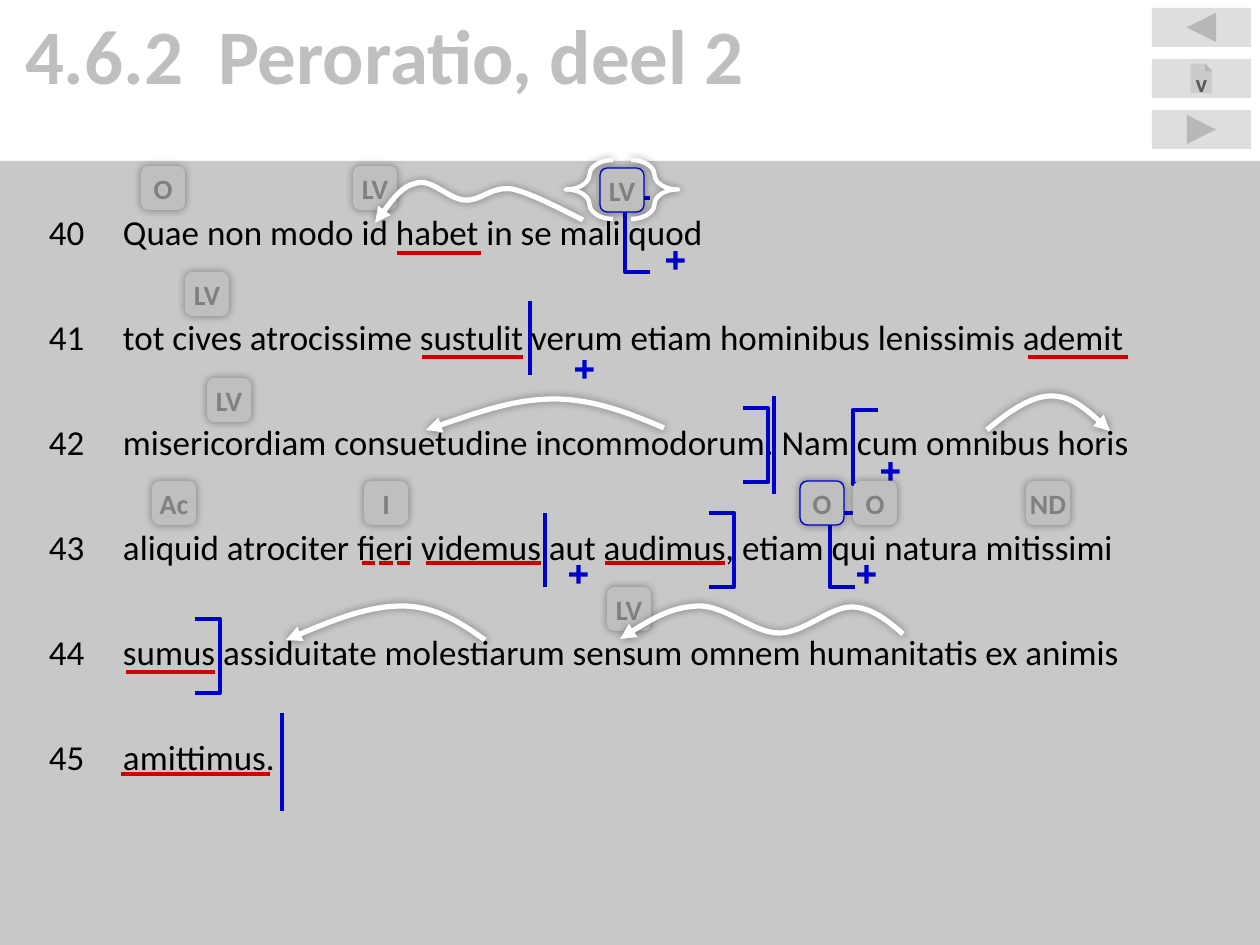
from lxml import etree
from pptx import Presentation
from pptx import util as u
from pptx.dml.color import RGBColor
from pptx.enum import dml, shapes, text
from pptx.oxml.ns import qn

PX = u.Inches(1) / 126
WHITE = RGBColor(0xFF, 0xFF, 0xFF)
BLACK = RGBColor(0, 0, 0)
SILVER = RGBColor(0xBF, 0xBF, 0xBF)
GREY = RGBColor(0x80, 0x80, 0x80)
DARK = RGBColor(0x59, 0x59, 0x59)
BLUE = RGBColor(0, 0, 0xCC)
RED = RGBColor(0xCC, 0, 0)
KIND = shapes.MSO_SHAPE
PITCH = 105

VERSES = [
    dict(line="40\tQuae non modo id habet in se mali quod",
         tags=[(141, 5, "O"), (353, 5, "LV"), (600, 7, "LV", BLUE)],
         rules=[(397, 481, 92)], opens=[(625, 37)], pluses=[(663, 87)],
         braces=[(566, -1, False), (631, -1, True)],
         arrows=[[(583, 59), (557, 46), (530, 32), (512, 28), (491, 25), (480, 41), (464, 39),
                  (449, 38), (432, 18), (417, 22), (402, 25), (389, 43), (375, 62)]]),
    dict(line="41\ttot cives atrocissime sustulit verum etiam hominibus lenissimis ademit",
         tags=[(185, 6, "LV")], rules=[(422, 523, 91), (1028, 1128, 91)],
         breaks=[(530, 35, 74)], pluses=[(572, 91)]),
    dict(line="42\tmisericordiam consuetudine incommodorum. Nam cum omnibus horis",
         tags=[(207, 7, "LV")], breaks=[(774, 25, 98)],
         opens=[(853, 39)], closes=[(743, 37)], pluses=[(878, 88)],
         arrows=[[(664, 57), (629, 42), (593, 28), (554, 28), (515, 28), (470, 44), (426, 59)],
                 [(987, 59), (1008, 41), (1031, 25), (1051, 25), (1071, 25), (1091, 42),
                  (1110, 60)]]),
    dict(line="43\taliquid atrociter fieri videmus aut audimus, etiam qui natura mitissimi",
         tags=[(152, 5, "Ac"), (364, 5, "I"), (800, 5, "O", BLUE), (853, 5, "O"),
               (1026, 5, "ND")],
         rules=[(362, 412, 87, dml.MSO_LINE.SQUARE_DOT), (426, 541, 87), (605, 725, 87)],
         breaks=[(545, 37, 74)], opens=[(830, 37)], closes=[(709, 37)],
         pluses=[(854, 86), (566, 86)]),
    dict(line="44\tsumus assiduitate molestiarum sensum omnem humanitatis ex animis",
         tags=[(607, 6, "LV")], rules=[(126, 215, 91)], closes=[(195, 38)],
         arrows=[[(485, 59), (460, 41), (435, 25), (402, 25), (369, 25), (328, 41), (286, 59)],
                 [(903, 53), (887, 39), (871, 26), (851, 26), (830, 26), (804, 52), (779, 52),
                  (753, 52), (725, 24), (698, 25), (672, 26), (646, 41), (620, 58)]]),
    dict(line="45\tamittimus.", rules=[(121, 270, 88)], breaks=[(282, 27, 98)]),
]


def emu(*lengths):
    """Turn px lengths into EMU."""
    return [u.Emu(round(length * PX)) for length in lengths]


def assign(target, **values):
    """Set every given attribute on the target."""
    for name, value in values.items():
        setattr(target, name, value)


def add_node(parent, tag, **values):
    """Append a drawing element with attributes."""
    node = etree.SubElement(parent, qn(tag))
    for name, value in values.items():
        node.set(name, str(value))
    return node


def style(shape, fill=None, alpha=None, line=None, width=2.5, glow=False):
    """Give a shape its fill, outline and optional soft shadow."""
    if fill is None:
        shape.fill.background()
    else:
        shape.fill.solid()
        shape.fill.fore_color.rgb = fill
    if alpha:
        color = shape._element.spPr.find(".//" + qn("a:srgbClr"))
        add_node(color, "a:alpha", val=alpha * 1000)
    if line is None:
        shape.line.fill.background()
    else:
        shape.line.color.rgb = line
        shape.line.width = u.Pt(width)
    shape.shadow.inherit = False
    if glow:
        effects = shape._element.spPr.find(qn("a:effectLst"))
        shadow = add_node(effects, "a:outerShdw", blurRad=u.Pt(5), dist=0, dir=0)
        add_node(add_node(shadow, "a:srgbClr", val="000000"), "a:alpha", val=40000)


def add_preset(page, kind, box, **look):
    """Add a styled preset shape."""
    shape = page.shapes.add_shape(kind, *emu(*box))
    style(shape, **look)
    return shape


def write(shape, lines, color, size, bold=False, align=text.PP_ALIGN.LEFT,
          anchor=text.MSO_ANCHOR.TOP, insets=(0, 0, 0, 0), after=0, tab=None):
    """Fill a shape with formatted paragraphs."""
    frame = shape.text_frame
    left, top, right, bottom = emu(*insets)
    assign(frame, word_wrap=True, auto_size=text.MSO_AUTO_SIZE.NONE, vertical_anchor=anchor,
           margin_left=left, margin_top=top, margin_right=right, margin_bottom=bottom)
    for index, line in enumerate(lines):
        para = frame.add_paragraph() if index else frame.paragraphs[0]
        assign(para, alignment=align, space_before=u.Pt(0), space_after=u.Pt(after))
        if tab:
            tabs = add_node(para._p.get_or_add_pPr(), "a:tabLst")
            add_node(tabs, "a:tab", pos=emu(tab)[0], algn="l")
        span = para.add_run()
        span.text = line
        assign(span.font, name="Calibri", size=u.Pt(size), bold=bold)
        span.font.color.rgb = color


def add_line(page, start, end, color, dash=None):
    """Draw a straight stroke."""
    line = page.shapes.add_connector(shapes.MSO_CONNECTOR.STRAIGHT, *emu(*start, *end))
    line.line.color.rgb = color
    assign(line.line, width=u.Pt(2.5), dash_style=dash)
    add_node(line._element.spPr, "a:effectLst")


def add_outline(page, points, **look):
    """Draw an open outline through the points."""
    builder = page.shapes.build_freeform(*points[0], scale=PX)
    builder.add_line_segments(points[1:], close=False)
    outline = builder.convert_to_shape()
    style(outline, **look)
    return outline


def add_bracket(page, spine, top, arm):
    """Draw a square bracket whose arms reach from the spine."""
    add_outline(page, [(spine + arm, top), (spine, top), (spine, top + 74),
                       (spine + arm, top + 74)], line=BLUE)


def add_arrow(page, points):
    """Draw a curved arrow from Bezier points."""
    arrow = add_outline(page, points, line=WHITE, width=3, glow=True)
    route = arrow._element.find(".//" + qn("a:path"))
    steps = route.findall(qn("a:lnTo"))
    for first in range(0, len(steps), 3):
        curve = add_node(route, "a:cubicBezTo")
        for step in steps[first:first + 3]:
            curve.append(step[0])
            route.remove(step)
    add_node(arrow.line._get_or_add_ln(), "a:tailEnd", type="triangle")


def add_tag(page, left, top, label, line=None):
    """Add a rounded grammar label."""
    tag = add_preset(page, KIND.ROUNDED_RECTANGLE, (left, top, 44, 44),
                     fill=SILVER, line=line, width=0.75, glow=True)
    write(tag, [label], GREY, 16, True, text.PP_ALIGN.CENTER, text.MSO_ANCHOR.MIDDLE)


def add_brace(page, left, top, flipped):
    """Add a white curly brace."""
    brace = add_preset(page, KIND.LEFT_BRACE, (left, top, 47, 59), line=WHITE, glow=True)
    brace.adjustments[0] = 0.35
    if flipped:
        brace._element.spPr.find(qn("a:xfrm")).set("flipH", "1")


def add_header(page, box):
    """Place the title and the navigation buttons."""
    left, top, width, height = box
    title = page.shapes.title
    assign(title, **dict(zip(("left", "top", "width", "height"), emu(*box))))
    write(title, ["4.6.2\tPeroratio, deel 2"], SILVER, 44, True, insets=(25, 8, 25, 0), tab=193)
    kinds = (KIND.ACTION_BUTTON_BACK_OR_PREVIOUS, KIND.ACTION_BUTTON_DOCUMENT,
             KIND.ACTION_BUTTON_FORWARD_OR_NEXT)
    buttons = [add_preset(page, kind, (left + width - 108, top + 8 + 51 * row, 99, 39),
                          fill=SILVER, alpha=50) for row, kind in enumerate(kinds)]
    write(buttons[1], ["v"], DARK, 14, True, text.PP_ALIGN.CENTER, insets=(0, 9, 0, 0))


def add_marks(page, left, top, verse):
    """Place the annotations of one verse."""
    for x, y, length in verse.get("breaks", []):
        add_line(page, (left + x, top + y), (left + x, top + y + length), BLUE)
    for x, end, y, *dash in verse.get("rules", []):
        add_line(page, (left + x, top + y), (left + end, top + y), RED, *dash)
    for x, y in verse.get("opens", []):
        add_bracket(page, left + x, top + y, 25)
    for x, y in verse.get("closes", []):
        add_bracket(page, left + x + 25, top + y, -25)
    for x, y in verse.get("pluses", []):
        plus = add_preset(page, KIND.MATH_PLUS, (left + x, top + y, 25, 25), fill=BLUE)
        plus.adjustments[0] = 0.17
    for x, y, *label in verse.get("tags", []):
        add_tag(page, left + x, top + y, *label)
    for x, y, flipped in verse.get("braces", []):
        add_brace(page, left + x, top + y, flipped)
    for points in verse.get("arrows", []):
        add_arrow(page, [(left + x, top + y) for x, y in points])


def add_verses(page, box):
    """Place the text panel and its annotations."""
    panel = add_preset(page, KIND.RECTANGLE, box, fill=SILVER, alpha=85)
    write(panel, [verse["line"] for verse in VERSES], BLACK, 20,
          insets=(49, 49, 49, 49), after=36, tab=74)
    for row, verse in enumerate(VERSES):
        add_marks(page, box[0], box[1] + PITCH * row, verse)


def main():
    """Build and save the deck."""
    deck = Presentation()
    deck.slide_width, deck.slide_height = emu(1260, 945)
    page = deck.slides.add_slide(deck.slide_layouts[5])
    add_header(page, (0, 0, 1260, 161))
    add_verses(page, (0, 161, 1260, 784))
    deck.save("out.pptx")


if __name__ == "__main__":
    main()
